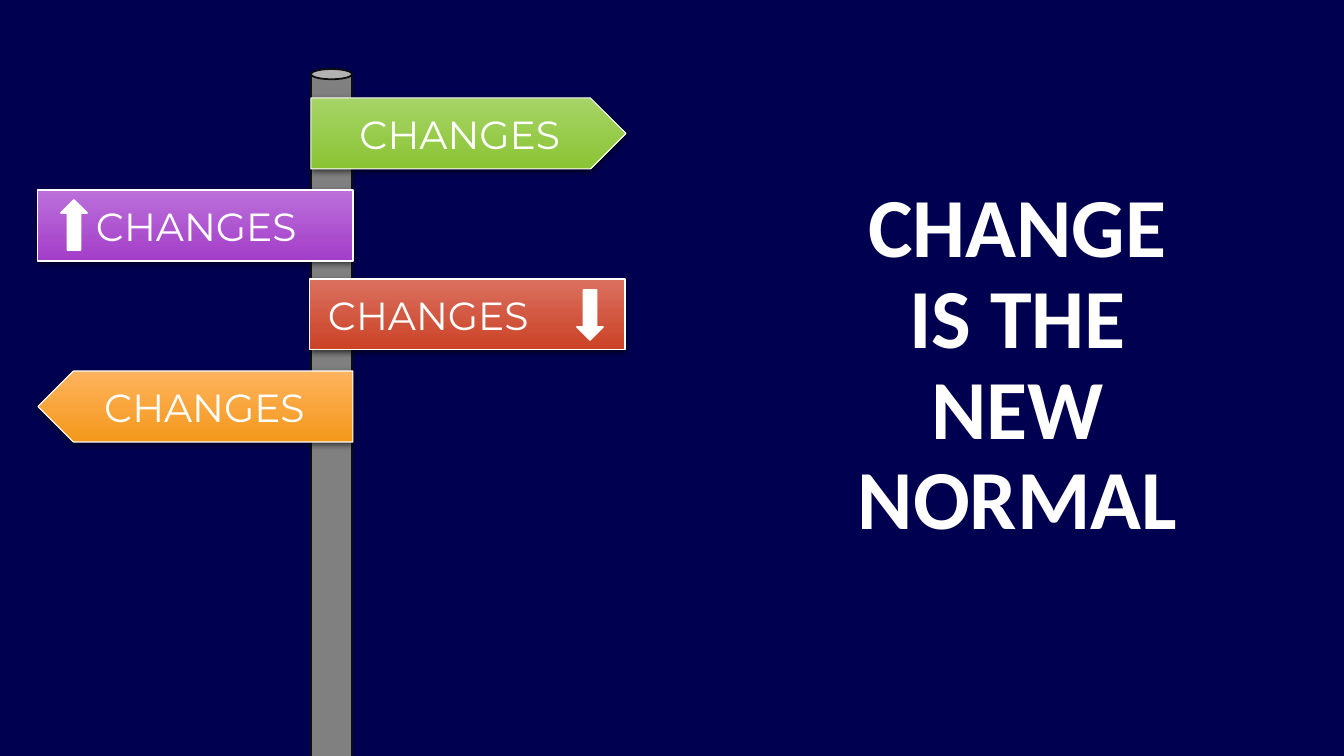
import pptx
import pptx.util
import pptx.dml.color
import pptx.enum.shapes
import pptx.enum.text
import pptx.oxml
import pptx.oxml.ns

SHAPE = pptx.enum.shapes.MSO_SHAPE
ALIGN = pptx.enum.text.PP_ALIGN
MIDDLE = pptx.enum.text.MSO_ANCHOR.MIDDLE
Pt = pptx.util.Pt

THEME = {
    "back": "000050", "white": "FFFFFF", "pole": "808080", "pole_line": "0D0D0D",
    "green": ("A6D467", "8AC433"), "purple": ("BB6FDA", "A33EC8"),
    "red": ("DA705F", "CB4226"), "orange": ("FEB35D", "F3981B"),
    "title_font": "Calibri", "title_size": 60,
    "sign_font": "Montserrat", "sign_size": 28,
    "sign_line": 0.75, "line": 1.25,
}

TITLE = "CHANGE IS THE NEW NORMAL"
TITLE_BOX = (827, 326, 381, 81)
POLE_BOX = (311, 69, 41, 700)
SIGN_SIZE = (315, 71)
ARROW_SIZE = (26, 50)
INSET = 10

# text, left, top, colours, pointed, flip, left inset (None centres the text)
SIGNS = [
    ("CHANGES", 311, 98, "green", True, None, None),
    ("CHANGES", 38, 371, "orange", True, "flipH", None),
    ("CHANGES", 38, 190, "purple", False, None, 58),
    ("CHANGES", 310, 279, "red", False, None, 18),
]
# left, top, flip
ARROWS = [(61, 200, None), (577, 290, "flipV")]

SHADOW = ('<a:outerShdw xmlns:a="http://schemas.openxmlformats.org/drawingml/2006/main"'
          ' blurRad="57150" dist="19050" dir="5400000" algn="ctr" rotWithShape="0">'
          '<a:srgbClr val="000000"><a:alpha val="63000"/></a:srgbClr></a:outerShdw>')


def px(n):
    return round(n * 914400 / 100.8)


def rgb(code):
    return pptx.dml.color.RGBColor.from_string(code)


def add_shape(slide, kind, box, line, weight, fill=None, flip=None):
    sp = slide.shapes.add_shape(kind, *map(px, box))
    sp.shadow.inherit = False
    sp.line.color.rgb = rgb(line)
    sp.line.width = Pt(weight)
    if fill:
        sp.fill.solid()
        sp.fill.fore_color.rgb = rgb(fill)
    if flip:
        sp._element.spPr.xfrm.set(flip, "1")
    return sp


def write(sp, text, font, size, align, bold=False):
    tf = sp.text_frame
    tf.word_wrap = True
    tf.vertical_anchor = MIDDLE
    tf.text = text
    p = tf.paragraphs[0]
    p.alignment = align
    r = p.runs[0]
    r.font.name = font
    r.font.size = Pt(size)
    r.font.bold = bold
    r.font.color.rgb = rgb(THEME["white"])
    return tf


def add_sign(slide, text, left, top, colours, pointed, flip, inset):
    sp = add_shape(slide, SHAPE.PENTAGON, (left, top, *SIGN_SIZE),
                   THEME["white"], THEME["sign_line"], flip=flip)
    sp.adjustments[0] = 0.5 if pointed else 0
    sp.fill.gradient()
    sp.fill.gradient_angle = 270
    for stop, colour in zip(sp.fill.gradient_stops, THEME[colours]):
        stop.color.rgb = rgb(colour)
    effects = sp._element.spPr.find(pptx.oxml.ns.qn("a:effectLst"))
    effects.append(pptx.oxml.parse_xml(SHADOW))
    align = ALIGN.CENTER if inset is None else ALIGN.LEFT
    tf = write(sp, text, THEME["sign_font"], THEME["sign_size"], align)
    tf.margin_left = px(INSET if inset is None else inset)


def main():
    prs = pptx.Presentation()
    prs.slide_width, prs.slide_height = px(1344), px(756)
    slide = prs.slides.add_slide(prs.slide_layouts[6])
    slide.background.fill.solid()
    slide.background.fill.fore_color.rgb = rgb(THEME["back"])

    title = slide.shapes.add_textbox(*map(px, TITLE_BOX))
    tf = write(title, TITLE, THEME["title_font"], THEME["title_size"], ALIGN.CENTER, True)
    tf.paragraphs[0].line_spacing = 0.9

    add_shape(slide, SHAPE.CAN, POLE_BOX, THEME["pole_line"], THEME["line"], THEME["pole"])
    for sign in SIGNS:
        add_sign(slide, *sign)
    for left, top, flip in ARROWS:
        add_shape(slide, SHAPE.UP_ARROW, (left, top, *ARROW_SIZE),
                  THEME["white"], THEME["line"], THEME["white"], flip)
    prs.save("out.pptx")


if __name__ == "__main__":
    main()
